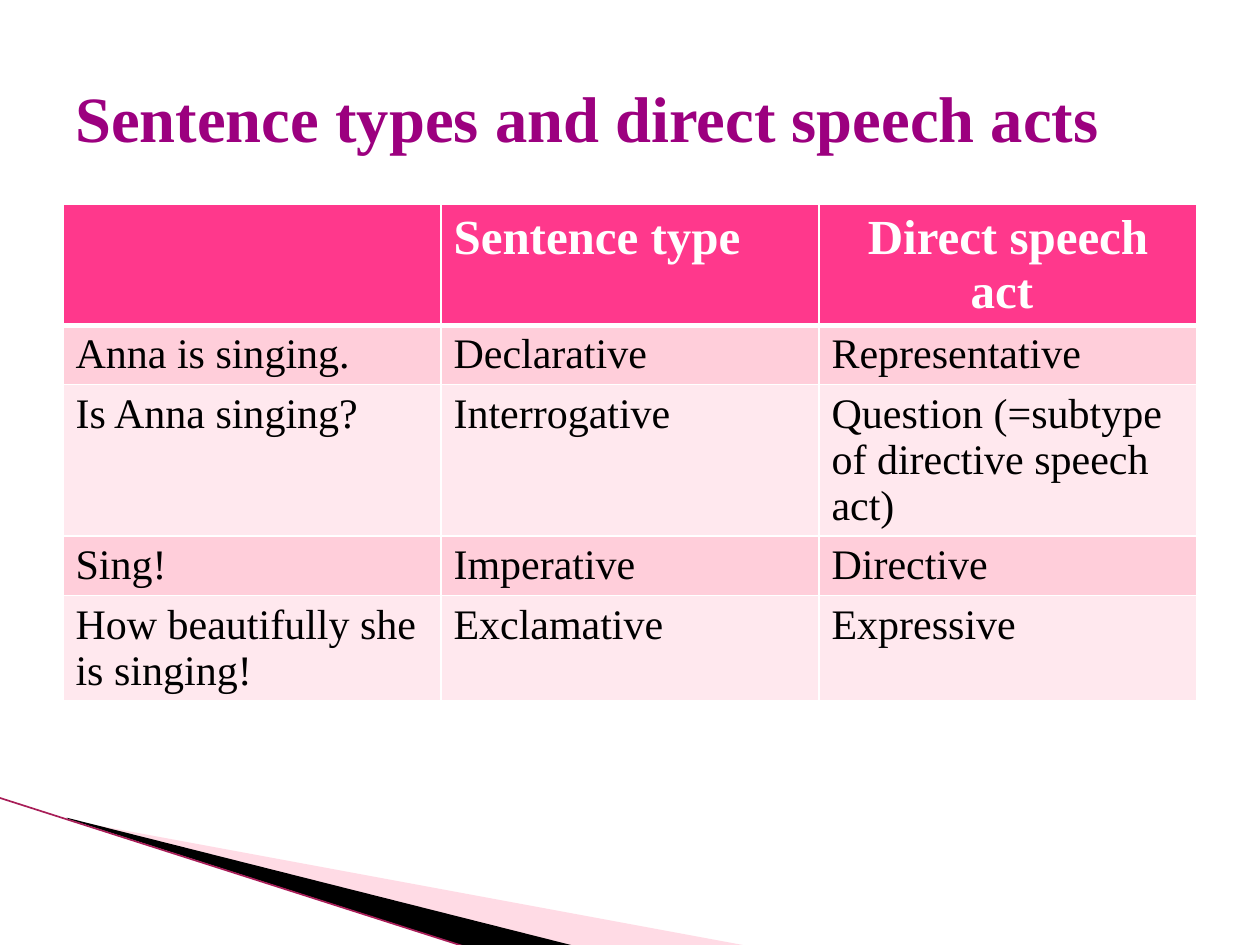
from dataclasses import dataclass

from lxml.etree import SubElement
from pptx import Presentation
from pptx.dml.color import RGBColor
from pptx.enum.shapes import MSO_CONNECTOR
from pptx.enum.text import MSO_ANCHOR, PP_ALIGN
from pptx.oxml.ns import qn
from pptx.slide import Slide
from pptx.util import Inches, Pt

WHITE = RGBColor(0xFF, 0xFF, 0xFF)
BLACK = RGBColor(0x00, 0x00, 0x00)
PURPLE = RGBColor(0x9C, 0x00, 0x7F)
HOT_PINK = RGBColor(0xFF, 0x38, 0x8C)
PINK = RGBColor(0xFF, 0xCE, 0xDA)
PALE_PINK = RGBColor(0xFF, 0xE8, 0xEE)
WEDGE_PINK = RGBColor(0xFF, 0xA5, 0xBF)
CRIMSON = RGBColor(0xA8, 0x1E, 0x58)

SPEECH_ACTS = [
    ["", "Sentence type", "Direct speech act "],
    ["Anna is singing.", "Declarative", "Representative"],
    ["Is Anna singing?", "Interrogative", "Question (=subtype of directive speech act)"],
    ["Sing!", "Imperative", "Directive"],
    ["How beautifully she is singing!", "Exclamative", "Expressive"],
]


@dataclass
class SlidePainter:
    """Draws styled elements on one page."""

    page: Slide
    font_name: str = "Times New Roman"

    def style(self, para, size, color, bold=False):
        para.font.name = self.font_name
        para.font.size = Pt(size)
        para.font.bold = bold
        para.font.color.rgb = color

    def wedge(self, points, color, opacity=100):
        start, *rest = [(Inches(x), Inches(y)) for x, y in points]
        builder = self.page.shapes.build_freeform(*start, scale=1.0)
        builder.add_line_segments(rest, close=True)
        shape = builder.convert_to_shape()
        shape.shadow.inherit = False
        shape.line.fill.background()
        shape.fill.solid()
        shape.fill.fore_color.rgb = color
        if opacity < 100:
            fill_color = shape._element.spPr.find(qn("a:solidFill"))[0]
            SubElement(fill_color, qn("a:alpha"), val=str(opacity * 1000))

    def line(self, start, end, color, width):
        ends = [Inches(value) for value in (*start, *end)]
        connector = self.page.shapes.add_connector(MSO_CONNECTOR.STRAIGHT, *ends)
        connector.line.color.rgb = color
        connector.line.width = Pt(width)
        SubElement(connector._element.spPr, qn("a:effectLst"))

    def title(self, text, left, top, width, height):
        box = self.page.shapes.add_textbox(
            Inches(left), Inches(top), Inches(width), Inches(height))
        box.text_frame.word_wrap = True
        box.text_frame.vertical_anchor = MSO_ANCHOR.MIDDLE
        para = box.text_frame.paragraphs[0]
        para.text = text
        self.style(para, 36.9, PURPLE, bold=True)

    def borders(self, cell, widths):
        properties = cell._tc.get_or_add_tcPr()
        for side, width in widths.items():
            border = SubElement(properties, qn(f"a:ln{side}"), w=str(Pt(width)))
            fill = SubElement(border, qn("a:solidFill"))
            SubElement(fill, qn("a:srgbClr"), val=str(WHITE))

    def table(self, rows, left, top, width, row_height):
        table = self.page.shapes.add_table(
            len(rows), len(rows[0]), Inches(left), Inches(top),
            Inches(width), Inches(row_height * len(rows))).table
        for row, texts in enumerate(rows):
            header = row == 0
            banded = PINK if row % 2 else PALE_PINK
            widths = {"L": 1, "R": 1, "T": 3 if row == 1 else 1, "B": 3 if header else 1}
            for column, text in enumerate(texts):
                cell = table.cell(row, column)
                self.borders(cell, widths)
                cell.fill.solid()
                cell.fill.fore_color.rgb = HOT_PINK if header else banded
                para = cell.text_frame.paragraphs[0]
                para.text = text
                self.style(para, 28 if header else 24, WHITE if header else BLACK, header)
        table.cell(0, 2).text_frame.paragraphs[0].alignment = PP_ALIGN.CENTER


def main():
    deck = Presentation()
    deck.slide_width, deck.slide_height = Inches(10), Inches(7.5)
    painter = SlidePainter(deck.slides.add_slide(deck.slide_layouts[6]))
    painter.wedge([(0.55, 6.51), (5.95, 7.51), (4.56, 7.51), (0.55, 6.5)], WEDGE_PINK, 40)
    painter.wedge([(0.53, 6.49), (4.57, 7.51), (3.72, 7.52), (0.54, 6.5)], BLACK)
    painter.line((-0.01, 6.33), (3.71, 7.52), CRIMSON, 0.95)
    painter.table(SPEECH_ACTS, 0.5, 1.62, 9, 0.41)
    painter.title("Sentence types and direct speech acts", 0.5, 0.3, 9, 1.25)
    deck.save("out.pptx")


if __name__ == "__main__":
    main()
